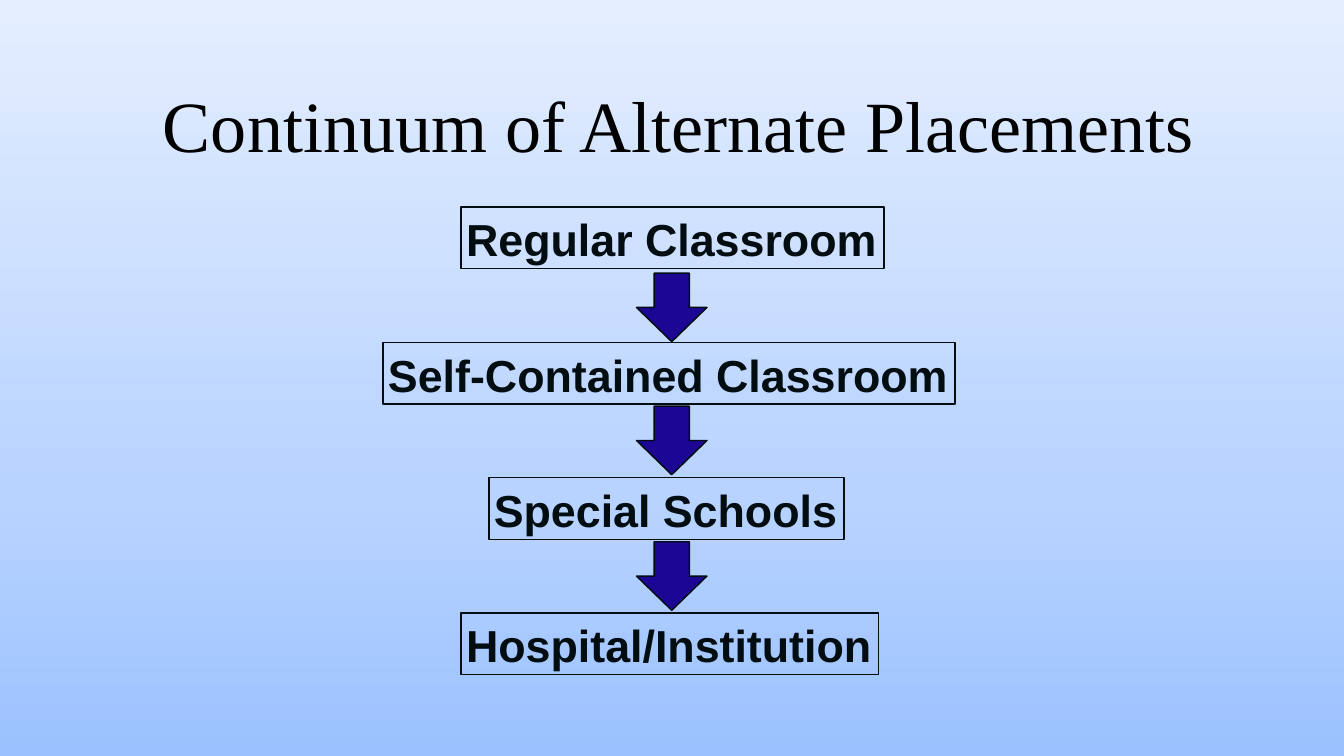
from copy import deepcopy
from dataclasses import dataclass

from pptx import Presentation
from pptx.dml.color import RGBColor
from pptx.enum.shapes import MSO_SHAPE
from pptx.enum.text import MSO_ANCHOR, MSO_AUTO_SIZE, PP_ALIGN
from pptx.oxml.ns import qn
from pptx.util import Emu, Pt

SCALE = 9144


@dataclass(frozen=True)
class Theme:
    """Colours, fonts and sizes of the deck."""
    ink: str = "020D12"
    black: str = "000000"
    arrow: str = "1B0793"
    sky: tuple = ((0, "9BC2FF"), (0.35, "B8D3FF"), (1, "E4EEFF"))
    serif: str = "Times New Roman"
    sans: str = "Arial"
    head: int = 103
    body: int = 64
    line: int = 2


def px(*sizes):
    """Turn px into EMU."""
    return [Emu(size * SCALE) for size in sizes]


def write(shape, text, *, font, size, color, bold=False,
          align=PP_ALIGN.LEFT, anchor=MSO_ANCHOR.TOP, space=1.0,
          fit=MSO_AUTO_SIZE.NONE):
    """Put formatted text into a shape."""
    frame = shape.text_frame
    frame.word_wrap = True
    frame.auto_size = fit
    frame.vertical_anchor = anchor
    (frame.margin_left, frame.margin_top,
     frame.margin_right, frame.margin_bottom) = px(10, 10, 10, 10)
    para = frame.paragraphs[0]
    para.alignment = align
    para.line_spacing = space
    run = para.add_run()
    run.text = text
    run.font.name = font
    run.font.size = Pt(size)
    run.font.bold = bold
    run.font.color.rgb = RGBColor.from_string(color)


class Deck:
    """Holds the theme and the current slide."""

    def __init__(self, theme, width, height):
        """Start a deck with one title-only slide."""
        self.theme = theme
        self.file = Presentation()
        self.file.slide_width, self.file.slide_height = px(width, height)
        self.slide = self.file.slides.add_slide(self.file.slide_layouts[5])

    def sky(self):
        """Fill the background with the theme gradient."""
        fill = self.slide.background.fill
        fill.gradient()
        fill.gradient_angle = 90
        stops = self.slide.element.find(".//" + qn("a:gsLst"))
        stops.append(deepcopy(stops[0]))
        for stop, (place, color) in zip(fill.gradient_stops, self.theme.sky):
            stop.position = place
            stop.color.rgb = RGBColor.from_string(color)

    def title(self, text, *area):
        """Place and fill the title."""
        shape = self.slide.shapes.title
        shape.left, shape.top, shape.width, shape.height = px(*area)
        write(shape, text, font=self.theme.serif, size=self.theme.head,
              color=self.theme.black, align=PP_ALIGN.CENTER,
              anchor=MSO_ANCHOR.BOTTOM, space=0.9)

    def shape(self, kind, *area):
        """Add an outlined shape without shadow."""
        shape = self.slide.shapes.add_shape(kind, *px(*area))
        shape.shadow.inherit = False
        shape.line.color.rgb = RGBColor.from_string(self.theme.ink)
        shape.line.width = Pt(self.theme.line)
        return shape

    def box(self, text, *area):
        """Add a labelled open box."""
        shape = self.shape(MSO_SHAPE.RECTANGLE, *area)
        shape.fill.background()
        write(shape, text, font=self.theme.sans, size=self.theme.body,
              color=self.theme.ink, bold=True,
              fit=MSO_AUTO_SIZE.SHAPE_TO_FIT_TEXT)

    def arrow(self, *area):
        """Add a block arrow that points down."""
        shape = self.shape(MSO_SHAPE.DOWN_ARROW, *area)
        shape.fill.solid()
        shape.fill.fore_color.rgb = RGBColor.from_string(self.theme.arrow)


def main():
    """Build the slide."""
    deck = Deck(Theme(), 2667, 1500)
    deck.sky()
    deck.title("Continuum of Alternate Placements", 296, 81, 2100, 262)
    steps = (
        ("Regular Classroom", 915, 839),
        ("Self-Contained Classroom", 760, 1135),
        ("Special Schools", 970, 705),
        ("Hospital/Institution", 915, 828),
    )
    top, pitch = 411, 268.5
    for row, (text, left, width) in enumerate(steps):
        deck.box(text, left, round(top + row * pitch), width, 122)
    for y in (542, 806, 1075):
        deck.arrow(1263, y, 140, 136)
    deck.file.save("out.pptx")


if __name__ == "__main__":
    main()
